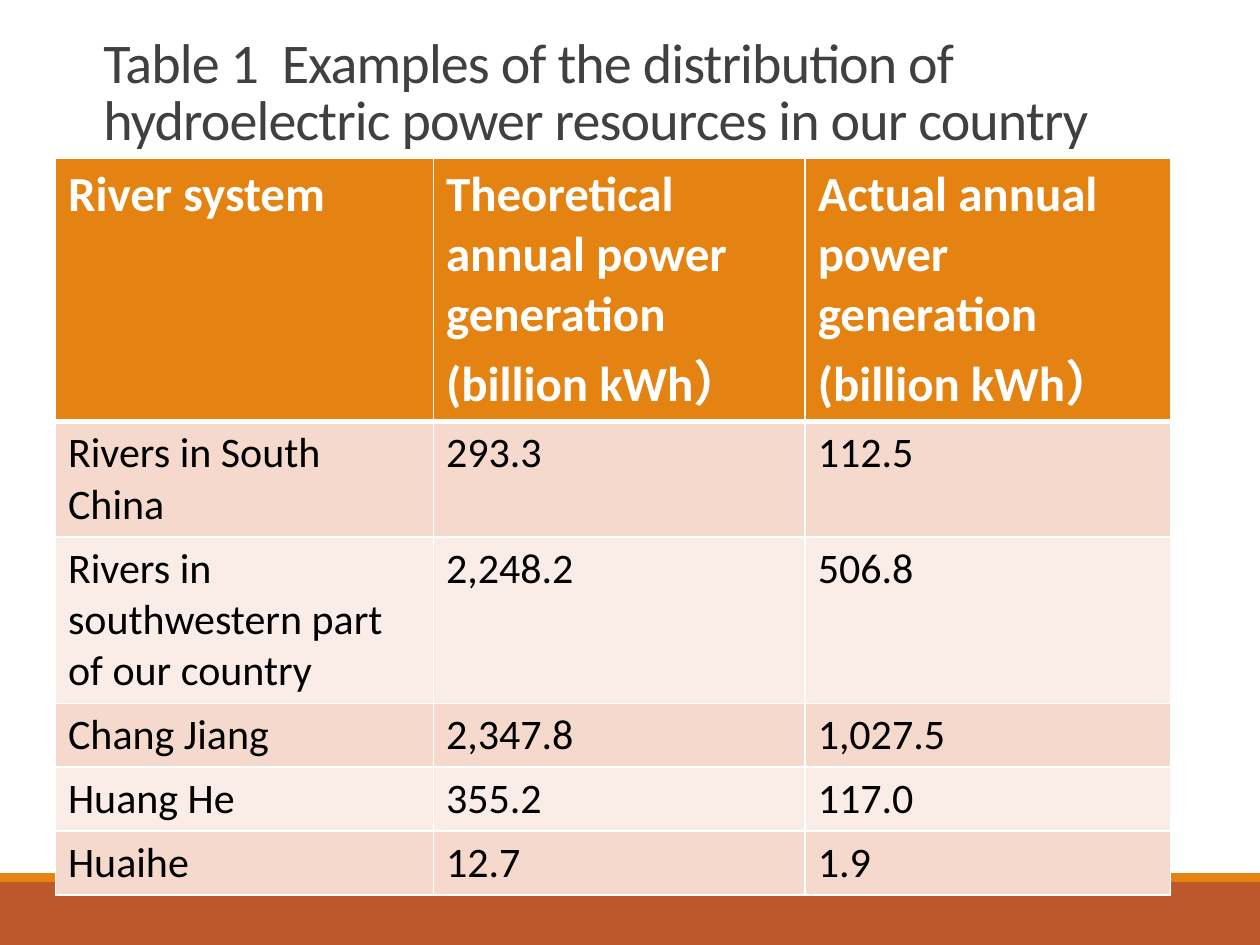
"""Build a slide with a table of hydroelectric power resources by river system."""
from lxml import etree
from pptx import Presentation
from pptx.dml.color import RGBColor
from pptx.enum.shapes import MSO_SHAPE
from pptx.enum.text import MSO_ANCHOR, MSO_AUTO_SIZE, PP_ALIGN
from pptx.oxml.ns import qn
from pptx.util import Inches, Pt

RECTANGLE = MSO_SHAPE.RECTANGLE
BOTTOM = MSO_ANCHOR.BOTTOM
LEFT = PP_ALIGN.LEFT
NO_AUTOFIT = MSO_AUTO_SIZE.NONE

ORANGE = RGBColor(0xE4, 0x83, 0x12)
RUST = RGBColor(0xBD, 0x58, 0x2C)
DARK_GRAY = RGBColor(0x40, 0x40, 0x40)
WHITE = RGBColor(0xFF, 0xFF, 0xFF)
BLACK = RGBColor(0x00, 0x00, 0x00)
ROW_FILLS = (RGBColor(0xFA, 0xED, 0xE7), RGBColor(0xF5, 0xD9, 0xCC))

FONT = "Calibri"
TITLE = "Table 1  Examples of the distribution of hydroelectric power resources in our country"
ROWS = [
    ("River system", "Theoretical annual power generation (billion kWh）",
     "Actual annual power generation (billion kWh）"),
    ("Rivers in South China", "293.3", "112.5"),
    ("Rivers in southwestern part of our country", "2,248.2", "506.8"),
    ("Chang Jiang", "2,347.8", "1,027.5"),
    ("Huang He", "355.2", "117.0"),
    ("Huaihe", "12.7", "1.9"),
]
COLUMN_WIDTHS = (3, 2.95, 2.9)
ROW_HEIGHT = 0.41
TABLE_HEIGHT = 5.67


def style_font(font, size, color, bold=False):
    """Apply the slide's typeface with a size, colour and weight."""
    font.name = FONT
    font.size = Pt(size)
    font.bold = bold
    font.color.rgb = color


def add_band(slide, top, height, color):
    """Add a full-width footer band."""
    shape = slide.shapes.add_shape(RECTANGLE, 0, Inches(top), Inches(10), Inches(height))
    shape.shadow.inherit = False
    shape.fill.solid()
    shape.fill.fore_color.rgb = color
    shape.line.fill.background()


def format_title(slide):
    """Place, fill and style the title placeholder."""
    title = slide.shapes.title
    title.left, title.top = Inches(0.72), Inches(0.22)
    title.width, title.height = Inches(8.25), Inches(1.04)
    frame = title.text_frame
    frame.text = TITLE
    frame.word_wrap = True
    frame.auto_size = NO_AUTOFIT
    frame.vertical_anchor = BOTTOM
    paragraph = frame.paragraphs[0]
    paragraph.alignment = LEFT
    paragraph.line_spacing = 0.85
    style_font(paragraph.font, 32, DARK_GRAY)
    paragraph.runs[0].font._element.set("spc", "-50")


def set_border(cell, side, width):
    """Draw a solid white border on one side of a cell."""
    properties = cell._tc.get_or_add_tcPr()
    line = etree.SubElement(properties, qn(f"a:ln{side}"), w=str(Pt(width)))
    fill = etree.SubElement(line, qn("a:solidFill"))
    etree.SubElement(fill, qn("a:srgbClr"), val=str(WHITE))


def fill_cell(cell, text, row_index):
    """Write a cell and style it as a header or a banded body cell."""
    is_header = row_index == 0
    cell.text = text
    font = cell.text_frame.paragraphs[0].font
    if is_header:
        style_font(font, 28, WHITE, bold=True)
    else:
        style_font(font, 24, BLACK)
    widths = {"L": 1, "R": 1, "T": 3 if row_index == 1 else 1, "B": 3 if is_header else 1}
    for side, width in widths.items():
        set_border(cell, side, width)
    cell.fill.solid()
    cell.fill.fore_color.rgb = ORANGE if is_header else ROW_FILLS[row_index % 2]


def add_river_table(slide):
    """Add the table of river systems."""
    frame = slide.shapes.add_table(
        len(ROWS), len(COLUMN_WIDTHS), Inches(0.44), Inches(1.26),
        Inches(sum(COLUMN_WIDTHS)), Inches(TABLE_HEIGHT))
    table = frame.table
    for column, width in zip(table.columns, COLUMN_WIDTHS):
        column.width = Inches(width)
    for row_index, texts in enumerate(ROWS):
        table.rows[row_index].height = Inches(ROW_HEIGHT)
        for column_index, text in enumerate(texts):
            fill_cell(table.cell(row_index, column_index), text, row_index)
    frame.height = Inches(TABLE_HEIGHT)


def main():
    """Build and save the presentation."""
    presentation = Presentation()
    presentation.slide_width = Inches(10)
    presentation.slide_height = Inches(7.5)
    slide = presentation.slides.add_slide(presentation.slide_layouts[5])
    add_band(slide, 7, 0.5, RUST)
    add_band(slide, 6.93, 0.07, ORANGE)
    format_title(slide)
    add_river_table(slide)
    presentation.save("out.pptx")


if __name__ == "__main__":
    main()
